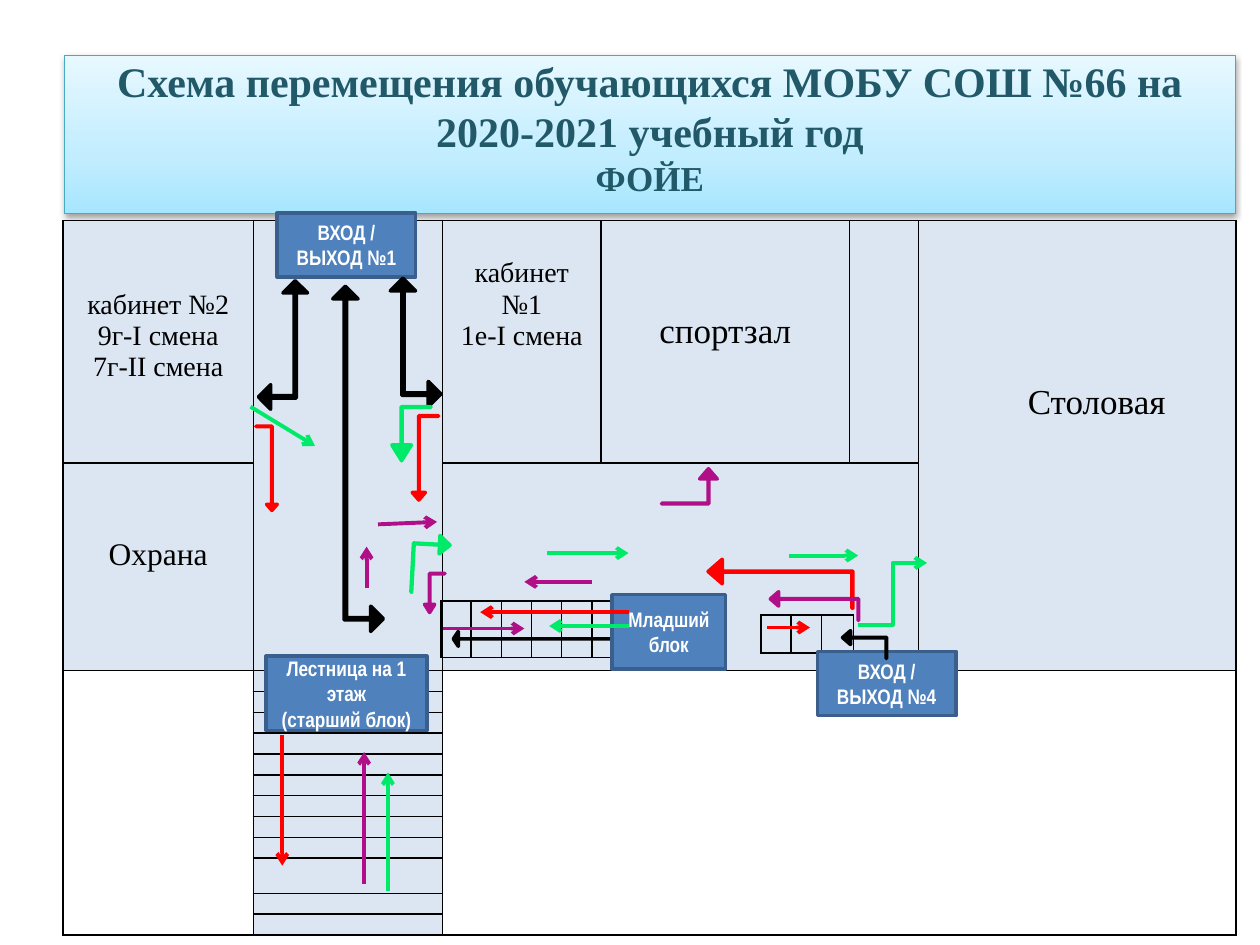
from copy import deepcopy
from dataclasses import dataclass
from typing import NamedTuple

from lxml.etree import SubElement
from pptx import Presentation
from pptx.dml.color import RGBColor as RGB
from pptx.enum.shapes import MSO_CONNECTOR as Link, MSO_SHAPE as Preset
from pptx.enum.text import MSO_ANCHOR as Anchor, MSO_AUTO_SIZE as AutoSize, PP_ALIGN as Align
from pptx.oxml.ns import qn
from pptx.util import Cm, Pt


@dataclass(frozen=True)
class Theme:
    serif: str = "Times New Roman"
    narrow: str = "Arial Narrow"
    black: str = "000000"
    white: str = "FFFFFF"
    room: str = "DCE6F2"
    box: str = "4F81BD"
    box_edge: str = "3A5F8C"
    title: str = "215968"
    title_edge: str = "46AAC5"
    title_stops: tuple = ((0, "A7E6FF"), (0.35, "C1EDFF"), (1, "E7F8FF"))
    green: str = "00EA6A"
    red: str = "FF0000"
    purple: str = "B10F87"
    title_sizes: tuple = (24, 20)
    box_size: int = 12
    empty_size: int = 6
    border: int = 1
    outline: int = 2
    route: float = 2.25


THEME = Theme()


class Room(NamedTuple):
    row: int
    column: int
    lines: tuple
    size: int
    top: float
    left: float = 0.19
    align: Align = Align.CENTER


class Box(NamedTuple):
    text: str
    left: float
    top: float
    width: float
    height: float


class BlockArrow(NamedTuple):
    preset: Preset
    color: str
    frame: tuple
    adjust: tuple
    flip: str = ""
    rotation: int = 0


class Route(NamedTuple):
    color: str
    start: tuple
    end: tuple
    kind: Link = Link.STRAIGHT


def style_text(frame, font: str, size: float, color: str, bold=False, align=Align.CENTER) -> None:
    for paragraph in frame.paragraphs:
        paragraph.alignment = align
        for run in paragraph.runs:
            run.font.name, run.font.size, run.font.bold = font, Pt(size), bold
            run.font.color.rgb = RGB.from_string(color)


def paint(shape, fill: str, line: str, width: float) -> None:
    shape.fill.solid()
    shape.fill.fore_color.rgb = RGB.from_string(fill)
    shape.line.color.rgb = RGB.from_string(line)
    shape.line.width = Pt(width)
    shape.shadow.inherit = False


def draw_title(slide, lines: tuple) -> None:
    title = slide.shapes.title
    title.left, title.top, title.width, title.height = Cm(1.3), Cm(1.12), Cm(23.6), Cm(3.18)
    frame = title.text_frame
    frame.text = "\n".join(lines)
    frame.auto_size, frame.vertical_anchor, frame.margin_top = AutoSize.NONE, Anchor.TOP, 0
    style_text(frame, THEME.serif, THEME.title_sizes[0], THEME.title, bold=True)
    frame.paragraphs[1].runs[0].font.size = Pt(THEME.title_sizes[1])
    # Three-stop gradient, outline and soft shadow
    title.fill.gradient()
    title.fill.gradient_angle = 90
    properties = title._element.spPr
    stops = properties.find(".//" + qn("a:gsLst"))
    stops.append(deepcopy(stops[-1]))
    for stop, (position, color) in zip(title.fill.gradient_stops, THEME.title_stops):
        stop.position, stop.color.rgb = position, RGB.from_string(color)
    title.line.color.rgb, title.line.width = RGB.from_string(THEME.title_edge), Pt(0.75)
    effects = SubElement(properties, qn("a:effectLst"))
    shadow = SubElement(effects, qn("a:outerShdw"), blurRad="40000", dist="20000",
                        dir="5400000", rotWithShape="0")
    shade = SubElement(shadow, qn("a:srgbClr"), val=THEME.black)
    SubElement(shade, qn("a:alpha"), val="38000")


def draw_grid(slide, left: float, top: float, columns: list, rows: list):
    """Add an unfilled, black-ruled table of empty cells."""
    grid = slide.shapes.add_table(len(rows), len(columns), Cm(left), Cm(top),
                                  Cm(sum(columns)), Cm(sum(rows))).table
    grid.first_row = grid.horz_banding = False
    for column, width in zip(grid.columns, columns):
        column.width = Cm(width)
    for row, height in zip(grid.rows, rows):
        row.height = Cm(height)
    for cell in grid.iter_cells():
        cell.margin_top = cell.margin_bottom = 0
        for side in ("lnL", "lnR", "lnT", "lnB"):
            edge = SubElement(cell._tc.get_or_add_tcPr(), qn("a:" + side),
                              w=str(Pt(THEME.border)))
            SubElement(SubElement(edge, qn("a:solidFill")), qn("a:srgbClr"), val=THEME.black)
        cell.fill.background()
        SubElement(cell.text_frame.paragraphs[0]._p, qn("a:endParaRPr"),
                   sz=str(THEME.empty_size * 100))
    return grid


def draw_floor(slide, rooms: list) -> None:
    steps = [0.42] * 9 + [0.71] + [0.42] * 2
    floor = draw_grid(slide, 1.27, 4.45, [3.84, 3.81, 3.2, 5, 1.4, 6.4], [4.88, 4.19] + steps)
    last = len(steps) + 1
    for first, final in (((0, 1), (1, 1)), ((0, 5), (1, 5)), ((1, 2), (1, 4)),
                         ((2, 0), (last, 0)), ((2, 2), (last, 5))):
        floor.cell(*first).merge(floor.cell(*final))
    for row in range(last + 1):
        for column in range(6):
            fill = floor.cell(row, column).fill
            fill.solid()
            inside = row < 2 or column == 1
            fill.fore_color.rgb = RGB.from_string(THEME.room if inside else THEME.white)
    for room in rooms:
        cell = floor.cell(room.row, room.column)
        cell.text_frame.text = "\n".join(room.lines)
        cell.margin_top, cell.margin_left, cell.margin_right = Cm(room.top), Cm(room.left), Cm(0.19)
        style_text(cell.text_frame, THEME.serif, room.size, THEME.black, align=room.align)


def draw_box(slide, box: Box) -> None:
    shape = slide.shapes.add_shape(Preset.RECTANGLE, *map(Cm, box[1:]))
    paint(shape, THEME.box, THEME.box_edge, THEME.outline)
    shape.text_frame.text = box.text
    shape.text_frame.word_wrap, shape.text_frame.vertical_anchor = True, Anchor.MIDDLE
    style_text(shape.text_frame, THEME.narrow, THEME.box_size, THEME.white, bold=True)


def draw_arrow(slide, arrow: BlockArrow) -> None:
    shape = slide.shapes.add_shape(arrow.preset, *map(Cm, arrow.frame))
    paint(shape, arrow.color, arrow.color, THEME.outline)
    for index, value in enumerate(arrow.adjust):
        shape.adjustments[index] = value
    for axis in arrow.flip:
        shape._element.spPr.xfrm.set("flip" + axis, "1")
    shape.rotation = arrow.rotation


def draw_route(slide, route: Route) -> None:
    line = slide.shapes.add_connector(route.kind, *map(Cm, route.start + route.end))
    line.line.color.rgb, line.line.width = RGB.from_string(route.color), Pt(THEME.route)
    SubElement(line.line._get_or_add_ln(), qn("a:tailEnd"), type="arrow")
    SubElement(line._element.spPr, qn("a:effectLst"))


TITLE = ("Схема перемещения обучающихся МОБУ СОШ №66 на 2020-2021 учебный год", "ФОЙЕ")
ROOMS = [
    Room(0, 0, ("кабинет №2", "9г-I смена", "7г-II смена"), 16, 1.39),
    Room(0, 2, ("кабинет", "№1", "1е-I смена"), 16, 0.75),
    Room(0, 3, ("спортзал",), 20, 1.85),
    Room(0, 5, ("Столовая",), 20, 3.27, 2.2, Align.LEFT),
    Room(1, 0, ("Охрана",), 18, 1.51),
]
BOXES = [
    Box("Лестница на 1 этаж\n(старший блок)", 5.36, 13.23, 3.25, 1.5),
    Box("ВХОД / ВЫХОД №1", 5.59, 4.29, 2.79, 1.3),
    Box("Младший блок", 12.34, 11.99, 2.29, 1.5),
    Box("ВХОД / ВЫХОД №4", 16.48, 13.13, 2.79, 1.3),
]
TWO_WAY, BENT, WIDE_BENT = (0.048, 0.25, 0.25), (0.02, 0.25, 0.289), (0.02, 0.25, 0.403)
STAIR_ARROW = BlockArrow(Preset.LEFT_RIGHT_ARROW, THEME.black, (9.14, 12.73, 3.53, 0.3), (0, 0.334))
ARROWS = [
    BlockArrow(Preset.LEFT_UP_ARROW, THEME.black, (5.21, 5.66, 0.99, 2.59), TWO_WAY),
    BlockArrow(Preset.LEFT_UP_ARROW, THEME.black, (7.87, 5.61, 1.02, 2.59), TWO_WAY, "H"),
    BlockArrow(Preset.LEFT_UP_ARROW, THEME.black, (6.71, 5.77, 1.02, 6.96), TWO_WAY, "H"),
    BlockArrow(Preset.BENT_UP_ARROW, THEME.green, (7.9, 8.2, 0.79, 1.09), WIDE_BENT, "HV"),
    BlockArrow(Preset.BENT_UP_ARROW, THEME.green, (8.1, 11, 1.17, 0.74), BENT, "H", 93),
    BlockArrow(Preset.BENT_UP_ARROW, THEME.red, (15.24, 10.31, 0.99, 2.92), BENT, "HV", 90),
    BlockArrow(Preset.BENT_UP_ARROW, THEME.red, (8.31, 8.38, 0.53, 1.7), BENT, "", 180),
    BlockArrow(Preset.BENT_UP_ARROW, THEME.red, (5.16, 8.59, 0.43, 1.7), BENT, "H", 180),
    BlockArrow(Preset.BENT_UP_ARROW, THEME.purple, (16.13, 11.33, 0.58, 1.78), BENT, "HV", 90),
    BlockArrow(Preset.BENT_UP_ARROW, THEME.purple, (8.56, 11.56, 0.41, 0.79), WIDE_BENT, "HV"),
    BlockArrow(Preset.BENT_UP_ARROW, THEME.purple, (13.34, 9.45, 1.12, 0.71), BENT),
    BlockArrow(Preset.BENT_UP_ARROW, THEME.black, (17.15, 12.55, 0.56, 0.89), BENT, "HV", 90),
]
ROUTES = [
    Route(THEME.green, (12.67, 12.62), (11.07, 12.62)),
    Route(THEME.green, (7.82, 17.96), (7.82, 15.57)),
    Route(THEME.green, (15.9, 11.2), (17.3, 11.2)),
    Route(THEME.green, (11.02, 11.15), (12.67, 11.15)),
    Route(THEME.green, (17.3, 12.6), (18.69, 11.35), Link.ELBOW),
    Route(THEME.green, (5.05, 8.2), (6.35, 8.99)),
    Route(THEME.red, (15.47, 12.65), (16.33, 12.65)),
    Route(THEME.red, (12.67, 12.34), (9.68, 12.34)),
    Route(THEME.red, (5.69, 14.81), (5.69, 17.45)),
    Route(THEME.purple, (11.94, 11.73), (10.57, 11.73)),
    Route(THEME.purple, (8.94, 12.67), (10.57, 12.67)),
    Route(THEME.purple, (7.34, 17.83), (7.34, 15.16)),
    Route(THEME.purple, (7.39, 11.86), (7.39, 11.02)),
    Route(THEME.purple, (7.62, 10.57), (8.81, 10.52)),
]


def main() -> None:
    deck = Presentation()
    deck.slide_width, deck.slide_height = Cm(25.4), Cm(19.05)
    slide = deck.slides.add_slide(deck.slide_layouts[5])
    draw_title(slide, TITLE)
    # Floor plan and the two short staircases
    draw_floor(slide, ROOMS)
    draw_grid(slide, 8.89, 12.12, [0.6] * 7, [1.14])
    draw_grid(slide, 15.34, 12.4, [0.6, 0.6, 0.65], [0.76])
    # Labels and movement arrows
    draw_arrow(slide, STAIR_ARROW)
    for box in BOXES:
        draw_box(slide, box)
    for arrow in ARROWS:
        draw_arrow(slide, arrow)
    for route in ROUTES:
        draw_route(slide, route)
    deck.save("out.pptx")


if __name__ == "__main__":
    main()
